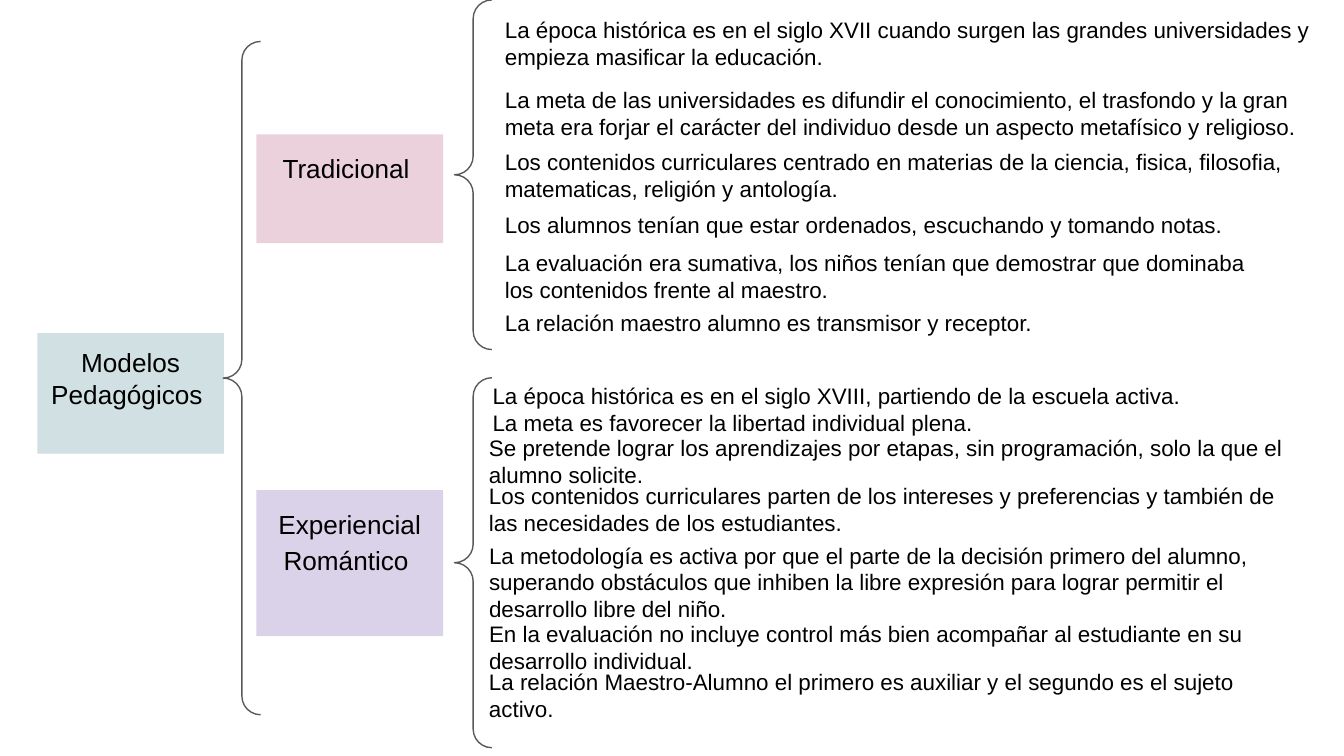
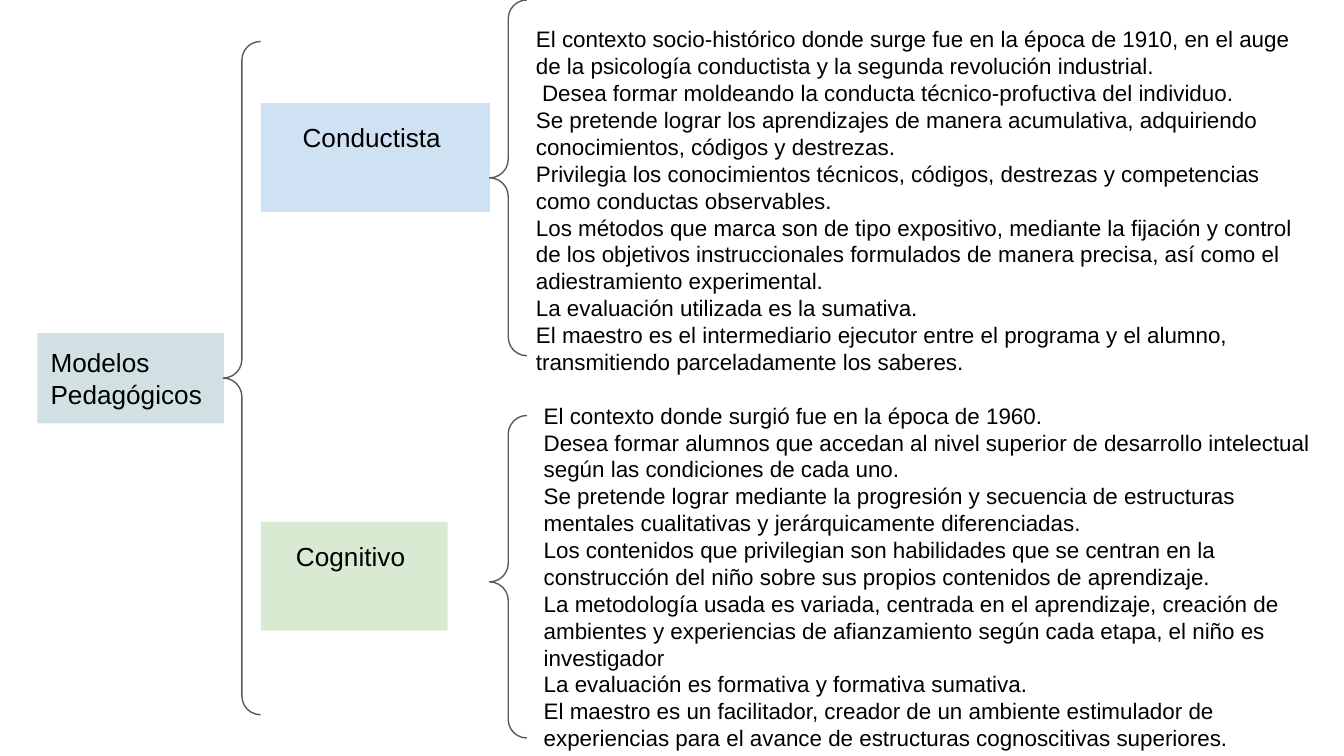
"""Builds two brace diagrams of pedagogical models."""
from pptx import Presentation
from pptx.dml.color import RGBColor
from pptx.enum import shapes, text
from pptx.util import Pt

BLACK = RGBColor(0x00, 0x00, 0x00)
GREY = RGBColor(0x59, 0x59, 0x59)
TEAL = RGBColor(0xD0, 0xE0, 0xE3)
PINK = RGBColor(0xEA, 0xD1, 0xDC)
PURPLE = RGBColor(0xD9, 0xD2, 0xE9)
BLUE = RGBColor(0xCF, 0xE2, 0xF3)
GREEN = RGBColor(0xD9, 0xEA, 0xD3)
FONT = "Arial"
INSET = 7.2
BRACE_WIDTH = 20

TRADICIONAL = [
    (1.4, 446.4, 43.2, [
        "La época histórica es en el siglo XVII cuando surgen las grandes "
        "universidades y empieza masificar la educación."]),
    (39.2, 446.4, 43.9, [
        "La meta de las universidades es difundir el conocimiento, el trasfondo "
        "y la gran meta era forjar el carácter del individuo desde un aspecto "
        "metafísico y religioso."]),
    (72, 456.5, 43.9, [
        "Los contenidos curriculares centrado en materias de la ciencia, fisica, "
        "filosofia, matematicas, religión y antología."]),
    (106, 456.5, 28.8, [
        "Los alumnos tenían que estar ordenados, escuchando y tomando notas."]),
    (126.2, 419.8, 43.2, [
        "La evaluación era sumativa, los niños tenían que demostrar que dominaba "
        "los contenidos frente al maestro."]),
    (158.6, 419.8, 28.8, [
        "La relación maestro alumno es transmisor y receptor."]),
]

ROMANTICO_INICIO = [
    (197.6, 442.8, 43.2, [
        "La época histórica es en el siglo XVIII, partiendo de la escuela activa.",
        "La meta es favorecer la libertad individual plena."]),
]

ROMANTICO = [
    (225.5, 463, 43.2, [
        "Se pretende lograr los aprendizajes por etapas, sin programación, solo "
        "la que el alumno solicite."]),
    (251.3, 446.4, 43.2, [
        "Los contenidos curriculares parten de los intereses y preferencias y "
        "también de las necesidades de los estudiantes."]),
    (283, 428.4, 57.6, [
        "La metodología es activa por que el parte de la decisión primero del "
        "alumno, superando obstáculos que inhiben la libre expresión para lograr "
        "permitir el desarrollo libre del niño."]),
    (324.9, 428.4, 43.2, [
        "En la evaluación no incluye control más bien acompañar al estudiante en "
        "su desarrollo individual."]),
    (350.7, 446.4, 43.2, [
        "La relación Maestro-Alumno el primero es auxiliar y el segundo es el "
        "sujeto activo."]),
]

CONDUCTISTA = [
    (6.5, 433.4, 201.6, [
        "El contexto socio-histórico donde surge fue en la época de 1910, en el "
        "auge de la psicología conductista y la segunda revolución industrial.",
        " Desea formar moldeando la conducta técnico-profuctiva del individuo.",
        "Se pretende lograr los aprendizajes de manera acumulativa, adquiriendo "
        "conocimientos, códigos y destrezas.",
        "Privilegia los conocimientos técnicos, códigos, destrezas y competencias "
        "como conductas observables.",
        "Los métodos que marca son de tipo expositivo, mediante la fijación y "
        "control de los objetivos instruccionales formulados de manera precisa, "
        "así como el adiestramiento experimental.",
        "La evaluación utilizada es la sumativa.",
        "El maestro es el intermediario ejecutor entre el programa y el alumno, "
        "transmitiendo parceladamente los saberes."]),
]

COGNITIVO = [
    (208.1, 425.6, 201.6, [
        "El contexto donde surgió fue en la época de 1960.",
        "Desea formar alumnos que accedan al nivel superior de desarrollo "
        "intelectual según las condiciones de cada uno.",
        "Se pretende lograr mediante la progresión y secuencia de estructuras "
        "mentales cualitativas y jerárquicamente diferenciadas.",
        "Los contenidos que privilegian son habilidades que se centran en la "
        "construcción del niño sobre sus propios contenidos de aprendizaje.",
        "La metodología usada es variada, centrada en el aprendizaje, creación de "
        "ambientes y experiencias de afianzamiento según cada etapa, el niño es "
        "investigador",
        "La evaluación es formativa y formativa sumativa.",
        "El maestro es un facilitador, creador de un ambiente estimulador de "
        "experiencias para el avance de estructuras cognoscitivas superiores."]),
]


def write(sp, paragraphs, size, align=text.PP_ALIGN.LEFT):
    """Fill a shape with top-anchored paragraphs and return its text frame."""
    tf = sp.text_frame
    tf.word_wrap = True
    tf.auto_size = text.MSO_AUTO_SIZE.NONE
    tf.vertical_anchor = text.MSO_ANCHOR.TOP
    tf.margin_left = tf.margin_right = tf.margin_top = tf.margin_bottom = Pt(INSET)
    for i, words in enumerate(paragraphs):
        p = tf.add_paragraph() if i else tf.paragraphs[0]
        p.alignment = align
        r = p.add_run()
        r.text = words
        r.font.name = FONT
        r.font.size = Pt(size)
        r.font.color.rgb = BLACK
    return tf


def add_box(s, words, left, top, width, height, fill, align=text.PP_ALIGN.CENTER):
    """Add a filled label box and return its text frame."""
    sp = s.shapes.add_shape(shapes.MSO_SHAPE.RECTANGLE,
                            Pt(left), Pt(top), Pt(width), Pt(height))
    sp.shadow.inherit = False
    sp.fill.solid()
    sp.fill.fore_color.rgb = fill
    sp.line.fill.background()
    return write(sp, [words], 14, align)


def add_model(s, words, left, top, width, height, fill):
    """Add the box of one model, with looser paragraph spacing."""
    p = add_box(s, words, left, top, width, height, fill).paragraphs[0]
    p.line_spacing = 1.15
    p.space_before = p.space_after = Pt(12)


def add_brace(s, left, top, height, tip=0.5):
    """Add a left brace whose point sits at the given share of its height."""
    sp = s.shapes.add_shape(shapes.MSO_SHAPE.LEFT_BRACE,
                            Pt(left), Pt(top), Pt(BRACE_WIDTH), Pt(height))
    sp.shadow.inherit = False
    sp.fill.background()
    sp.line.color.rgb = GREY
    sp.line.width = Pt(0.75)
    sp.adjustments[0] = 0.5
    sp.adjustments[1] = tip


def add_notes(s, left, notes):
    """Add a column of text boxes that share a left edge."""
    for top, width, height, paragraphs in notes:
        sp = s.shapes.add_textbox(Pt(left), Pt(top), Pt(width), Pt(height))
        write(sp, paragraphs, 12)


def add_diagram(prs, root, root_height, root_align):
    """Add a slide with the root box and its brace."""
    s = prs.slides.add_slide(prs.slide_layouts[6])
    add_box(s, root, 20, 178.5, 100, root_height, TEAL, root_align)
    add_brace(s, 119.6, 22.2, 360.7)
    return s


def main():
    """Build and save the presentation."""
    prs = Presentation()
    prs.slide_width, prs.slide_height = Pt(720), Pt(405)

    s = add_diagram(prs, "Modelos Pedagógicos ", 64.6, text.PP_ALIGN.CENTER)
    add_model(s, "Tradicional ", 137.4, 72, 100, 58.3, PINK)
    add_model(s, "Experiencial Romántico ", 137.4, 262.6, 100, 78.3, PURPLE)
    add_brace(s, 243.5, 0, 187.3)
    add_notes(s, 263.4, TRADICIONAL)
    add_brace(s, 243.5, 202.4, 198.2)
    add_notes(s, 256.8, ROMANTICO_INICIO)
    add_notes(s, 254.9, ROMANTICO)

    s = add_diagram(prs, "Modelos Pedagógicos", 48.4, text.PP_ALIGN.LEFT)
    add_model(s, "Conductista ", 139.8, 55.2, 122.6, 58.3, BLUE)
    add_model(s, "Cognitivo ", 139.8, 279.6, 100, 58.3, GREEN)
    add_notes(s, 280, CONDUCTISTA)
    add_brace(s, 262.3, 222.6, 172.8, 0.516)
    add_brace(s, 262.3, 0, 190.6)
    add_notes(s, 284.2, COGNITIVO)

    prs.save("out.pptx")


if __name__ == "__main__":
    main()
